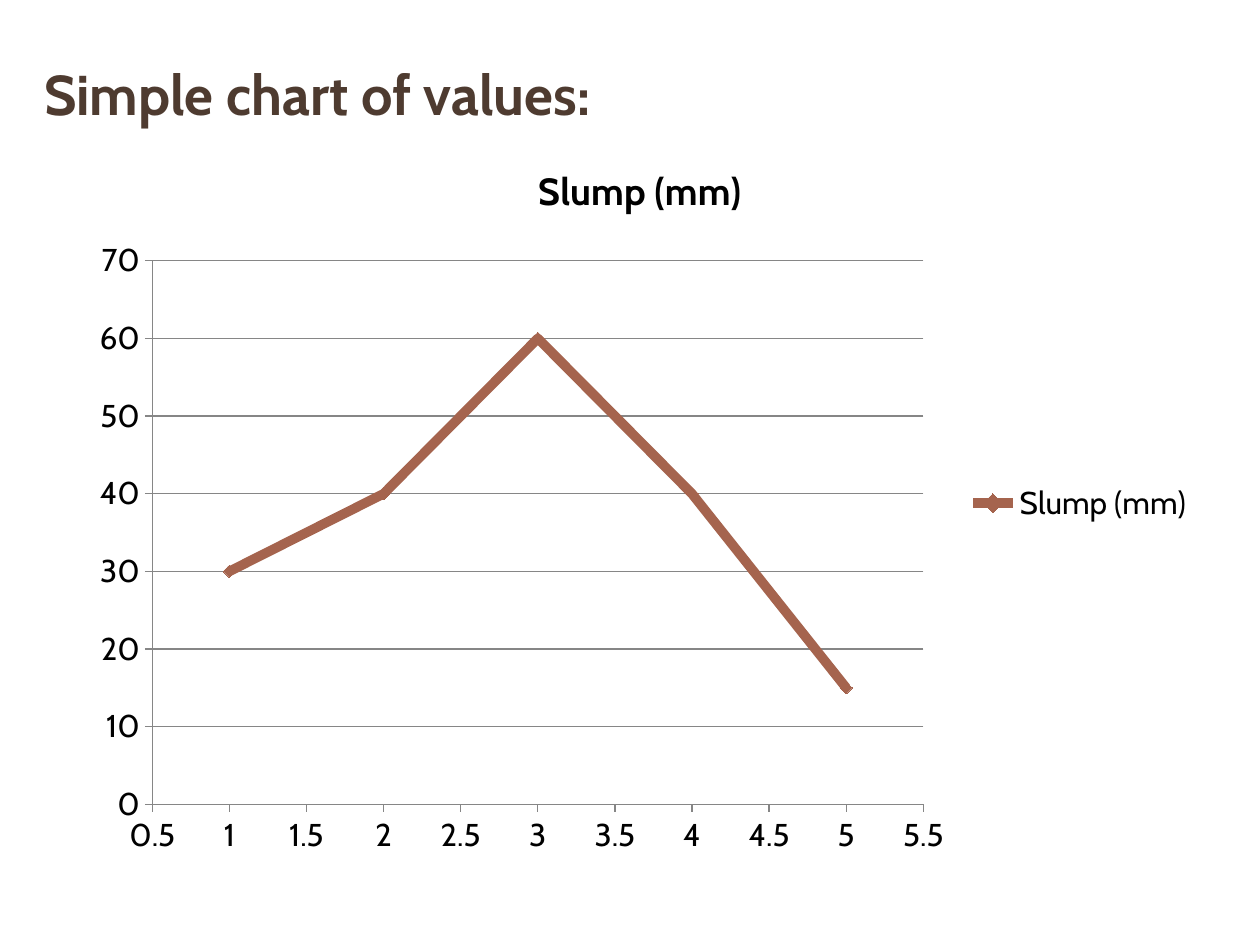
from pptx import Presentation
from pptx.chart.data import XyChartData
from pptx.dml.color import RGBColor
from pptx.enum.chart import (XL_CHART_TYPE, XL_LEGEND_POSITION,
                             XL_MARKER_STYLE, XL_TICK_MARK)
from pptx.oxml import parse_xml
from pptx.oxml.ns import nsdecls, qn
from pptx.util import Cm, Pt

SMOOTH_SCATTER = XL_CHART_TYPE.XY_SCATTER_SMOOTH
LEGEND_RIGHT = XL_LEGEND_POSITION.RIGHT
DIAMOND = XL_MARKER_STYLE.DIAMOND
TICK_OUTSIDE = XL_TICK_MARK.OUTSIDE
TICK_NONE = XL_TICK_MARK.NONE

FONT = "Cabin"
BROWN = "4E3B30"
RUST = "A5644E"
GREY = "868686"
BLACK = "000000"


def color(hex_string):
    return RGBColor.from_string(hex_string)


def style_font(font, size, hex_string, bold=False):
    font.name = FONT
    font.size = Pt(size)
    font.bold = bold
    font.color.rgb = color(hex_string)


deck = Presentation()
deck.slide_width, deck.slide_height = Cm(25.4), Cm(19.05)
page = deck.slides.add_slide(deck.slide_layouts[6])

# Heading
box = page.shapes.add_textbox(Cm(0.64), Cm(1.07), Cm(24.13), Cm(1.65))
box.text_frame.word_wrap = True
para = box.text_frame.paragraphs[0]
span = para.add_run()
span.text = "Simple chart of values:"
style_font(span.font, 32, BROWN, bold=True)

# Slump chart
data = XyChartData()
slump = data.add_series("Slump (mm)")
for x, y in enumerate([30, 40, 60, 40, 15], start=1):
    slump.add_data_point(x, y)

chart = page.shapes.add_chart(
    SMOOTH_SCATTER, Cm(1.47), Cm(2.74), Cm(22.86), Cm(14.81), data).chart
style_font(chart.font, 18, BLACK)

chart.has_title = True
title_span = chart.chart_title.text_frame.paragraphs[0].add_run()
title_span.text = "Slump (mm)"
style_font(title_span.font, 21.6, BLACK, bold=True)

chart.has_legend = True
chart.legend.position = LEGEND_RIGHT
chart.legend.include_in_layout = False

for axis, low, high, step in ((chart.category_axis, 0.5, 5.5, 0.5),
                              (chart.value_axis, 0, 70, 10)):
    axis.minimum_scale, axis.maximum_scale = low, high
    axis.major_unit = step
    axis.major_tick_mark = TICK_OUTSIDE
    axis.minor_tick_mark = TICK_NONE
    axis.tick_labels.number_format = "General"
    axis.tick_labels.number_format_is_linked = False
    axis.format.line.color.rgb = color(GREY)
    axis.format.line.width = Pt(0.75)

chart.category_axis.has_major_gridlines = False
chart.value_axis.has_major_gridlines = True
grid_line = chart.value_axis.major_gridlines.format.line
grid_line.color.rgb = color(GREY)
grid_line.width = Pt(0.75)

plot = chart.plots[0]
plot.vary_by_categories = False
series = plot.series[0]
series.smooth = True
series.format.line.color.rgb = color(RUST)
series.format.line.width = Pt(5.5)
series.marker.style = DIAMOND
series.marker.size = 7
series.marker.format.fill.solid()
series.marker.format.fill.fore_color.rgb = color(RUST)
series.marker.format.line.color.rgb = color(RUST)

# Fixed inner plot area, as fractions of the chart
plot_area = chart.element.find(".//" + qn("c:plotArea"))
for old_layout in plot_area.findall(qn("c:layout")):
    plot_area.remove(old_layout)
fractions = {"x": 0.07, "y": 0.17, "w": 0.68, "h": 0.74}
places = "".join(f'<c:{key} val="{value}"/>' for key, value in fractions.items())
plot_area.insert(0, parse_xml(
    f'<c:layout {nsdecls("c")}><c:manualLayout><c:layoutTarget val="inner"/>'
    f'<c:xMode val="edge"/><c:yMode val="edge"/>{places}'
    '</c:manualLayout></c:layout>'))

deck.save("out.pptx")
